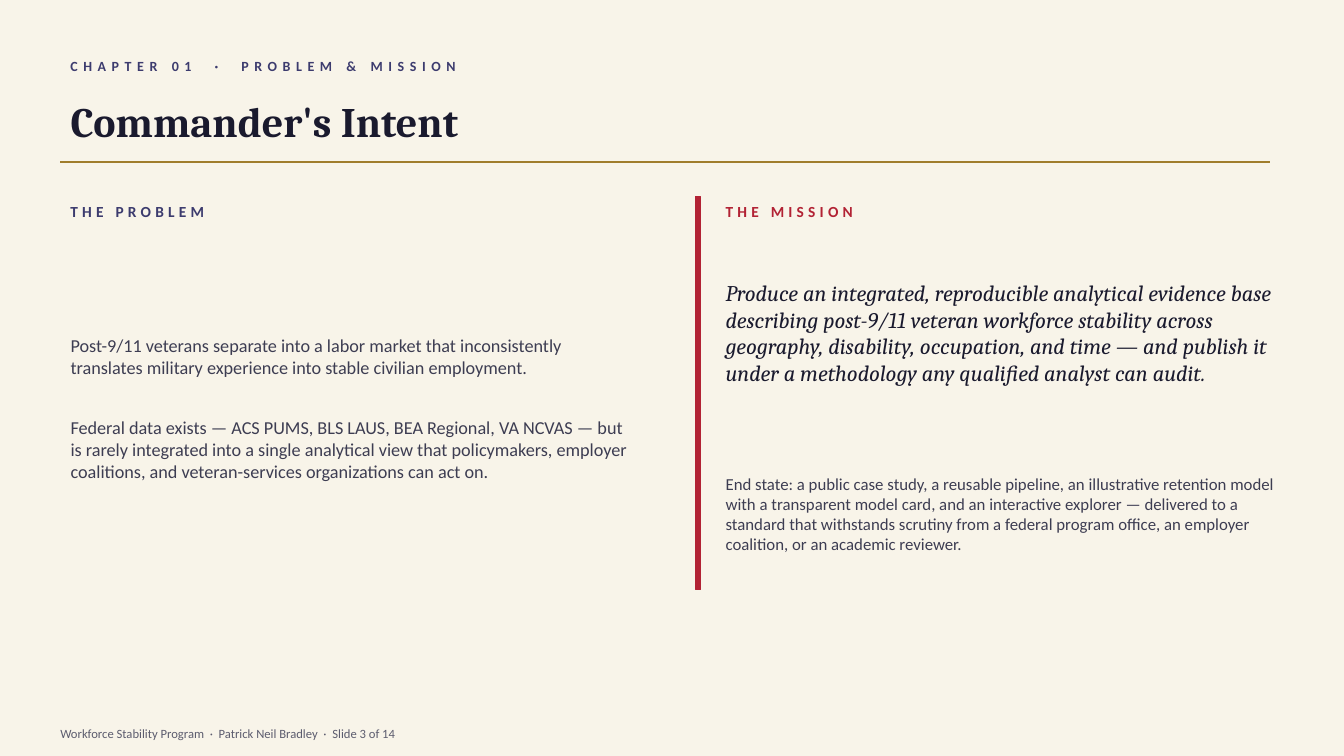
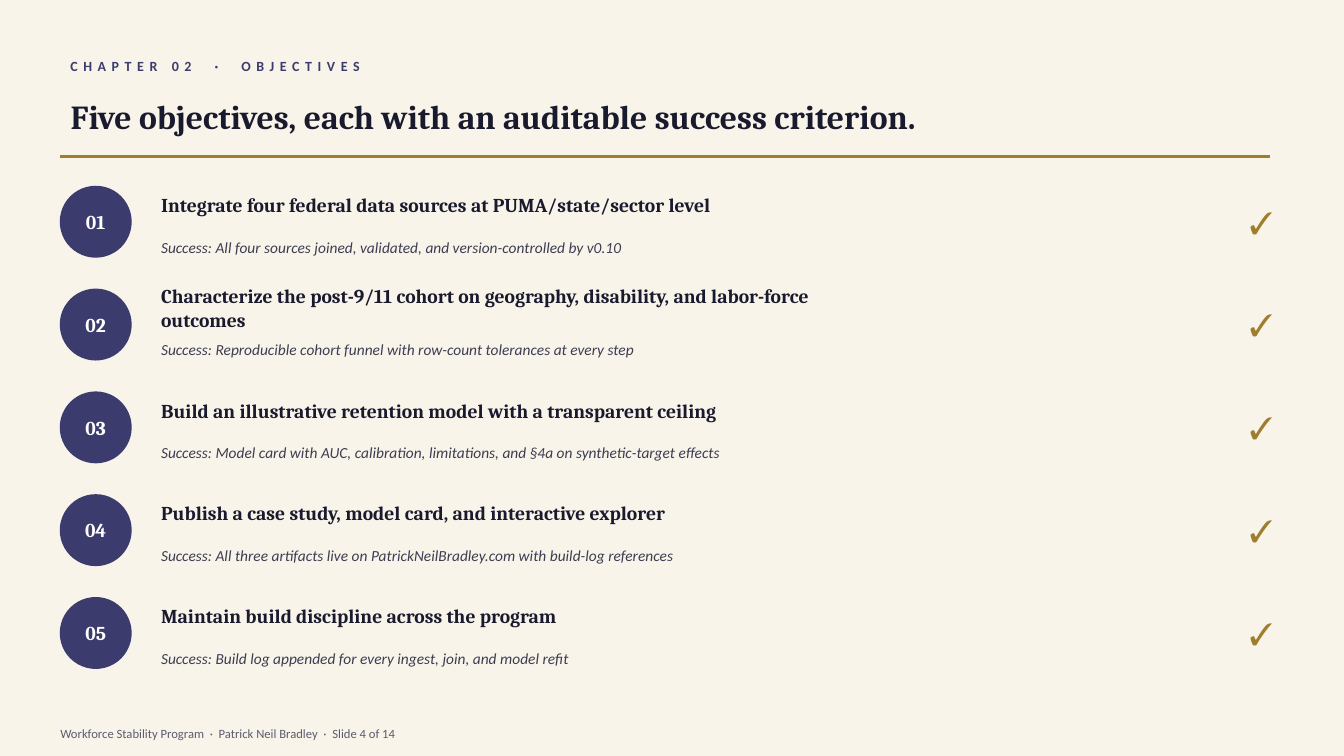
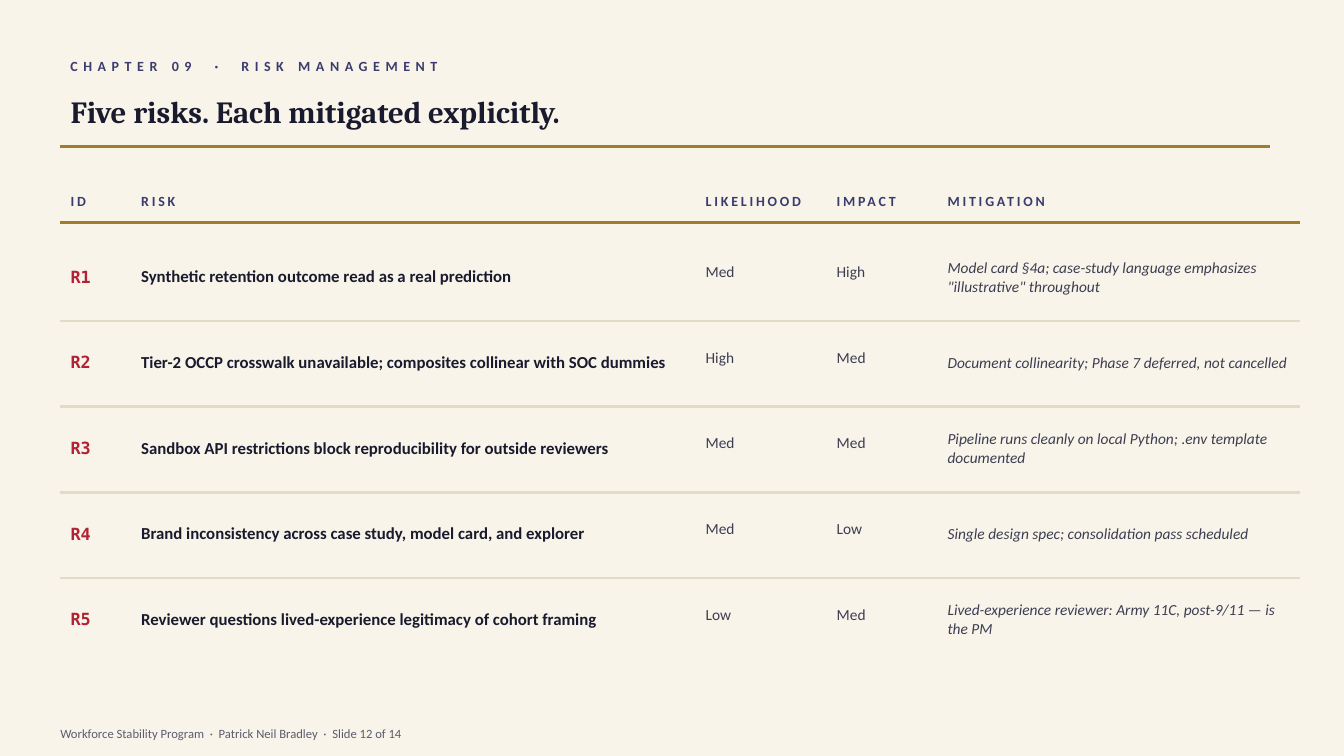
from lxml.etree import SubElement
from pptx import Presentation
from pptx.dml.color import RGBColor
from pptx.enum.shapes import MSO_CONNECTOR as Connector, MSO_SHAPE as Preset
from pptx.enum.text import MSO_ANCHOR as Anchor, MSO_AUTO_SIZE as AutoSize, PP_ALIGN as Align
from pptx.oxml.ns import qn
from pptx.util import Emu, Inches, Pt

CREAM = RGBColor(0xF8, 0xF4, 0xE9)
NAVY = RGBColor(0x3C, 0x3B, 0x6E)
INK = RGBColor(0x1A, 0x1A, 0x2E)
SLATE = RGBColor(0x3D, 0x3D, 0x52)
GRAY = RGBColor(0x5C, 0x5C, 0x6E)
GOLD = RGBColor(0xA0, 0x7D, 0x2C)
RED = RGBColor(0xB2, 0x22, 0x34)
SAND = RGBColor(0xE2, 0xDB, 0xC8)
WHITE = RGBColor(0xFF, 0xFF, 0xFF)

SANS = "Calibri"
SERIF = "Cambria"
MONO = "DejaVu Sans Mono"

GRID = Inches(0.1)
SLIDE_COLUMNS, SLIDE_ROWS = 133.33, 75
LEFT = 6
CONTENT_WIDTH = 120
TITLE_TOP = 8.5
SLIDE_TOTAL = 14
NO_TABLE_STYLE = "{2D5ABB26-0587-4C30-8999-92F81FD0307C}"

PROBLEM = [
    "Post-9/11 veterans separate into a labor market that inconsistently translates military "
    "experience into stable civilian employment.",
    "Federal data exists — ACS PUMS, BLS LAUS, BEA Regional, VA NCVAS — but is rarely integrated "
    "into a single analytical view that policymakers, employer coalitions, and veteran-services "
    "organizations can act on.",
]
MISSION = (
    "Produce an integrated, reproducible analytical evidence base describing post-9/11 veteran "
    "workforce stability across geography, disability, occupation, and time — and publish it "
    "under a methodology any qualified analyst can audit."
)
END_STATE = (
    "End state: a public case study, a reusable pipeline, an illustrative retention model with a "
    "transparent model card, and an interactive explorer — delivered to a standard that "
    "withstands scrutiny from a federal program office, an employer coalition, or an academic "
    "reviewer."
)
OBJECTIVES = [
    ("Integrate four federal data sources at PUMA/state/sector level",
     "All four sources joined, validated, and version-controlled by v0.10"),
    ("Characterize the post-9/11 cohort on geography, disability, and labor-force outcomes",
     "Reproducible cohort funnel with row-count tolerances at every step"),
    ("Build an illustrative retention model with a transparent ceiling",
     "Model card with AUC, calibration, limitations, and §4a on synthetic-target effects"),
    ("Publish a case study, model card, and interactive explorer",
     "All three artifacts live on PatrickNeilBradley.com with build-log references"),
    ("Maintain build discipline across the program",
     "Build log appended for every ingest, join, and model refit"),
]
RISK_HEADERS = ["ID", "RISK", "LIKELIHOOD", "IMPACT", "MITIGATION"]
RISK_WIDTHS = [7, 56, 13, 11, 36]
RISK_TOP = 16.75
HEADER_HEIGHT = 6.5
RISK_HEIGHT = 8.5
RISKS = [
    ("R1", "Synthetic retention outcome read as a real prediction", "Med", "High",
     'Model card §4a; case-study language emphasizes "illustrative" throughout'),
    ("R2", "Tier-2 OCCP crosswalk unavailable; composites collinear with SOC dummies", "High", "Med",
     "Document collinearity; Phase 7 deferred, not cancelled"),
    ("R3", "Sandbox API restrictions block reproducibility for outside reviewers", "Med", "Med",
     "Pipeline runs cleanly on local Python; .env template documented"),
    ("R4", "Brand inconsistency across case study, model card, and explorer", "Med", "Low",
     "Single design spec; consolidation pass scheduled"),
    ("R5", "Reviewer questions lived-experience legitimacy of cohort framing", "Low", "Med",
     "Lived-experience reviewer: Army 11C, post-9/11 — is the PM"),
]
LEVEL_FORMAT = dict(size=11, color=SLATE)
RISK_FORMATS = [
    dict(size=12, font=MONO, color=RED, bold=True),
    dict(size=12, color=INK, bold=True),
    LEVEL_FORMAT,
    LEVEL_FORMAT,
    dict(size=11, color=SLATE, italic=True),
]


def units(count):
    return Emu(round(count * GRID))


def box(left, top, width, height):
    return [units(count) for count in (left, top, width, height)]


def write_text(frame, text, size=12, font=SANS, color=INK, bold=False, italic=False,
               align=Align.LEFT, tracking=0, gap=0):
    lines = [text] if isinstance(text, str) else text
    for index, line in enumerate(lines):
        paragraph = frame.add_paragraph() if index else frame.paragraphs[0]
        properties = paragraph._p.get_or_add_pPr()
        properties.set("marL", "0")
        properties.set("indent", "0")
        SubElement(properties, qn("a:buNone"))
        paragraph.alignment = align
        paragraph.space_before = Pt(gap if index else 0)
        run = paragraph.add_run()
        run.text = line
        run.font.size = Pt(size)
        run.font.name = font
        run.font.color.rgb = color
        run.font.bold = bold
        run.font.italic = italic
        if tracking:
            run._r.get_or_add_rPr().set("spc", str(tracking * 100))


def prepare_frame(frame):
    frame.word_wrap = True
    frame.auto_size = AutoSize.NONE
    frame.vertical_anchor = Anchor.MIDDLE


def add_text(slide, text, area, **style):
    shape = slide.shapes.add_textbox(*box(*area))
    prepare_frame(shape.text_frame)
    write_text(shape.text_frame, text, **style)


def fill_placeholder(shape, text, area, **style):
    shape.left, shape.top, shape.width, shape.height = box(*area)
    prepare_frame(shape.text_frame)
    write_text(shape.text_frame, text, **style)


def add_solid(slide, preset, area, color):
    shape = slide.shapes.add_shape(preset, *box(*area))
    shape.shadow.inherit = False
    shape.fill.solid()
    shape.fill.fore_color.rgb = color
    shape.line.color.rgb = color
    shape.line.width = Pt(1)
    return shape


def add_rule(slide, row, span=CONTENT_WIDTH, color=GOLD, width=1.75):
    start, end, height = units(LEFT), units(LEFT + span), units(row)
    rule = slide.shapes.add_connector(Connector.STRAIGHT, start, height, end, height)
    rule.line.color.rgb = color
    rule.line.width = Pt(width)
    SubElement(rule._element.spPr, qn("a:effectLst"))


def add_badge(slide, text, area):
    badge = add_solid(slide, Preset.OVAL, area, NAVY)
    frame = badge.text_frame
    prepare_frame(frame)
    frame.margin_left = frame.margin_right = 0
    write_text(frame, text, size=14, font=SERIF, color=WHITE, bold=True, align=Align.CENTER)


def add_label(slide, text, left, color):
    add_text(slide, text, (left, 19.5, 58, 3), size=11, color=color, bold=True, tracking=3)


def start_slide(presentation, layout, number, chapter, title, size, height, rule_row):
    slide = presentation.slides.add_slide(presentation.slide_layouts.get_by_name(layout))
    add_text(slide, chapter, (LEFT, 5, 80, 3), size=10, color=NAVY, bold=True, tracking=4)
    fill_placeholder(slide.shapes.title, title, (LEFT, TITLE_TOP, CONTENT_WIDTH, height),
                     size=size, font=SERIF, bold=True)
    add_rule(slide, rule_row)
    footer = f"Workforce Stability Program  ·  Patrick Neil Bradley  ·  Slide {number} of {SLIDE_TOTAL}"
    add_text(slide, footer, (5, 71.5, 123.3, 2.5), size=9, color=GRAY)
    return slide


def fill_cell(cell, text, **style):
    cell.fill.background()
    cell.vertical_anchor = Anchor.MIDDLE
    write_text(cell.text_frame, text, **style)


def add_risk_table(slide):
    heights = [HEADER_HEIGHT] + [RISK_HEIGHT] * len(RISKS)
    area = box(LEFT, RISK_TOP, sum(RISK_WIDTHS), sum(heights))
    table = slide.shapes.add_table(len(heights), len(RISK_WIDTHS), *area).table
    table.first_row = table.horz_banding = False
    table._tbl.tblPr.find(qn("a:tableStyleId")).text = NO_TABLE_STYLE
    for column, width in zip(table.columns, RISK_WIDTHS):
        column.width = units(width)
    for row, height in zip(table.rows, heights):
        row.height = units(height)
    for column, header in enumerate(RISK_HEADERS):
        fill_cell(table.cell(0, column), header, size=10, color=NAVY, bold=True, tracking=2)
    for row, risk in enumerate(RISKS, start=1):
        for column, (text, style) in enumerate(zip(risk, RISK_FORMATS)):
            cell = table.cell(row, column)
            fill_cell(cell, text, **style)
            if style is LEVEL_FORMAT:
                cell.margin_bottom = units(1.5)


def add_risk_rules(slide):
    span = sum(RISK_WIDTHS)
    add_rule(slide, 22.1, span, width=2.5)
    for index in range(1, len(RISKS)):
        add_rule(slide, RISK_TOP + HEADER_HEIGHT + index * RISK_HEIGHT + 0.1, span, SAND)


def build_intent(presentation):
    slide = start_slide(presentation, "Title and Content", 3, "CHAPTER 01  ·  PROBLEM & MISSION",
                        "Commander's Intent", 30, 7, 16.05)
    right = 71
    add_label(slide, "THE PROBLEM", LEFT, NAVY)
    fill_placeholder(slide.placeholders[1], PROBLEM, (LEFT, 23, 58, 35),
                     size=13, color=SLATE, gap=27.5)
    add_solid(slide, Preset.RECTANGLE, (69, 19.5, 0.5, 39), RED)
    add_label(slide, "THE MISSION", right, RED)
    add_text(slide, MISSION, (right, 23, 57, 20), size=16, font=SERIF, italic=True)
    add_text(slide, END_STATE, (right, 43.5, 57, 15), size=12, color=SLATE)


def build_objectives(presentation):
    slide = start_slide(presentation, "Title Only", 4, "CHAPTER 02  ·  OBJECTIVES",
                        "Five objectives, each with an auditable success criterion.", 24, 6, 15.55)
    for index, (objective, success) in enumerate(OBJECTIVES):
        top = 18.5 + index * 10.2
        add_badge(slide, f"{index + 1:02}", (LEFT, top, 7, 7))
        add_text(slide, objective, (15, top - 0.2, 75, 4), size=14, font=SERIF, bold=True)
        add_text(slide, f"Success: {success}", (15, top + 4, 75, 4),
                 size=11, color=SLATE, italic=True)
        add_text(slide, "✓", (123, top, 4, 7), size=22, font=SERIF, color=GOLD,
                 bold=True, align=Align.CENTER)


def build_risks(presentation):
    slide = start_slide(presentation, "Title Only", 12, "CHAPTER 09  ·  RISK MANAGEMENT",
                        "Five risks. Each mitigated explicitly.", 22, 5, 14.55)
    add_risk_table(slide)
    add_risk_rules(slide)


def main():
    presentation = Presentation()
    presentation.slide_width = units(SLIDE_COLUMNS)
    presentation.slide_height = units(SLIDE_ROWS)
    background = presentation.slide_master.background.fill
    background.solid()
    background.fore_color.rgb = CREAM
    build_intent(presentation)
    build_objectives(presentation)
    build_risks(presentation)
    presentation.save("out.pptx")


if __name__ == "__main__":
    main()
